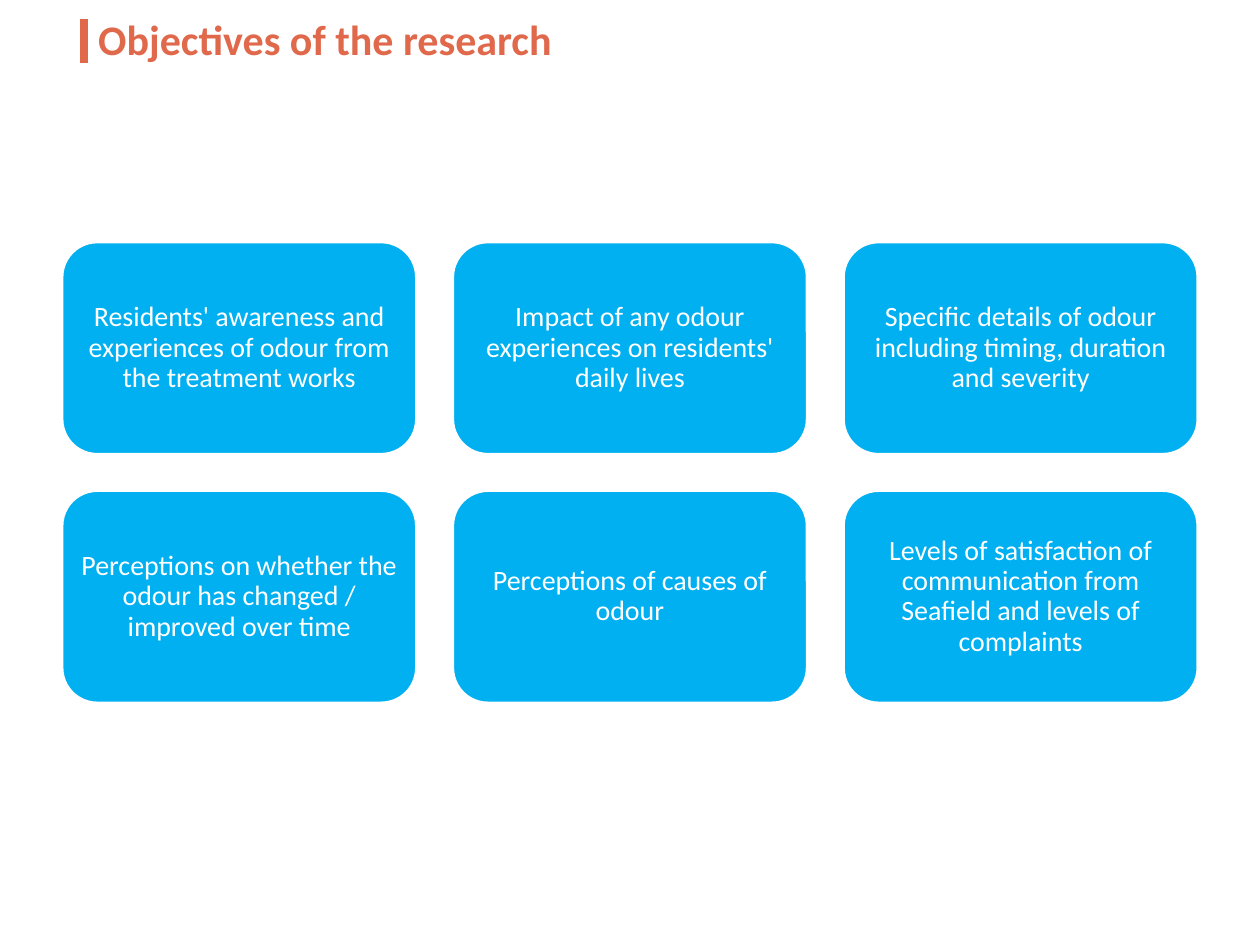
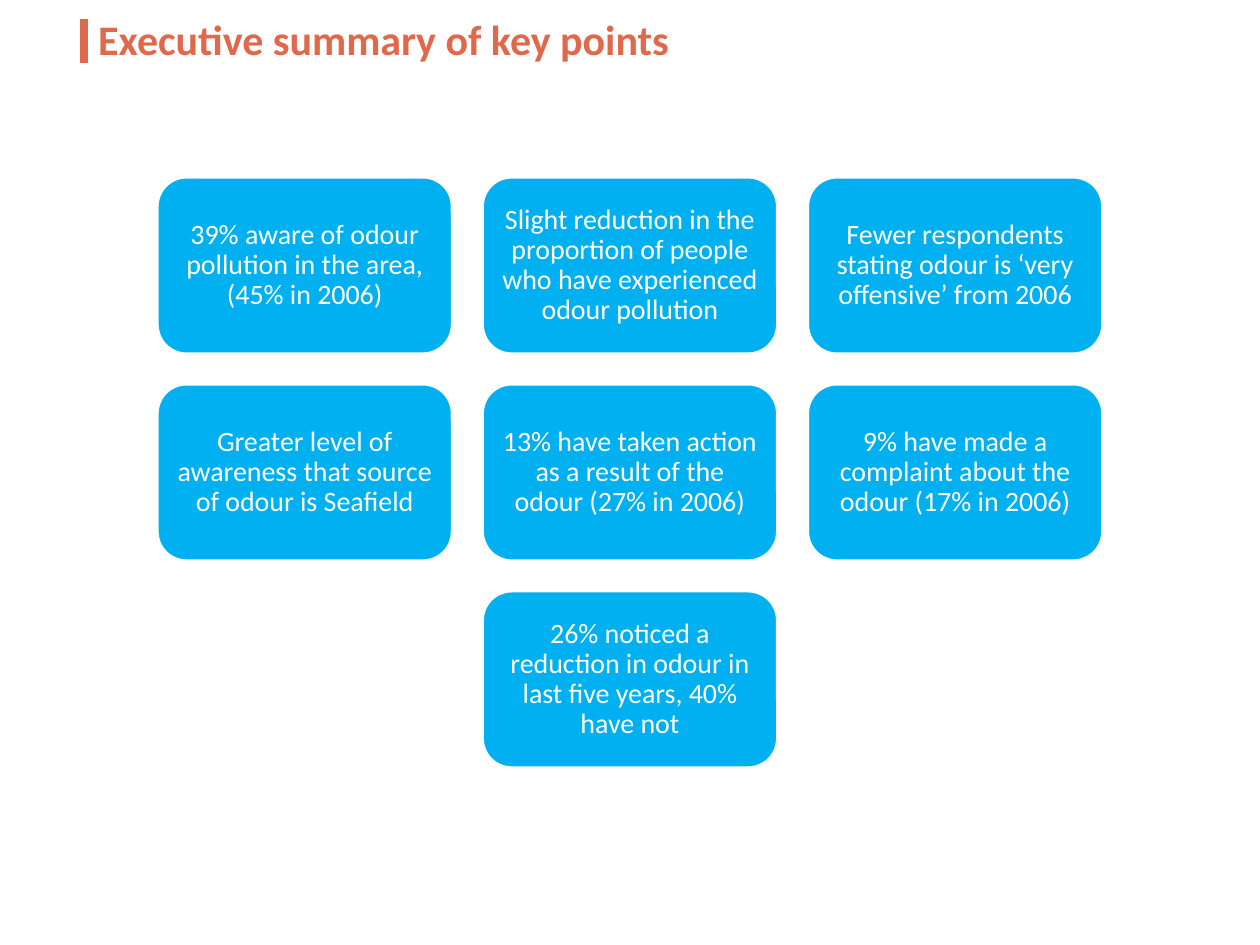
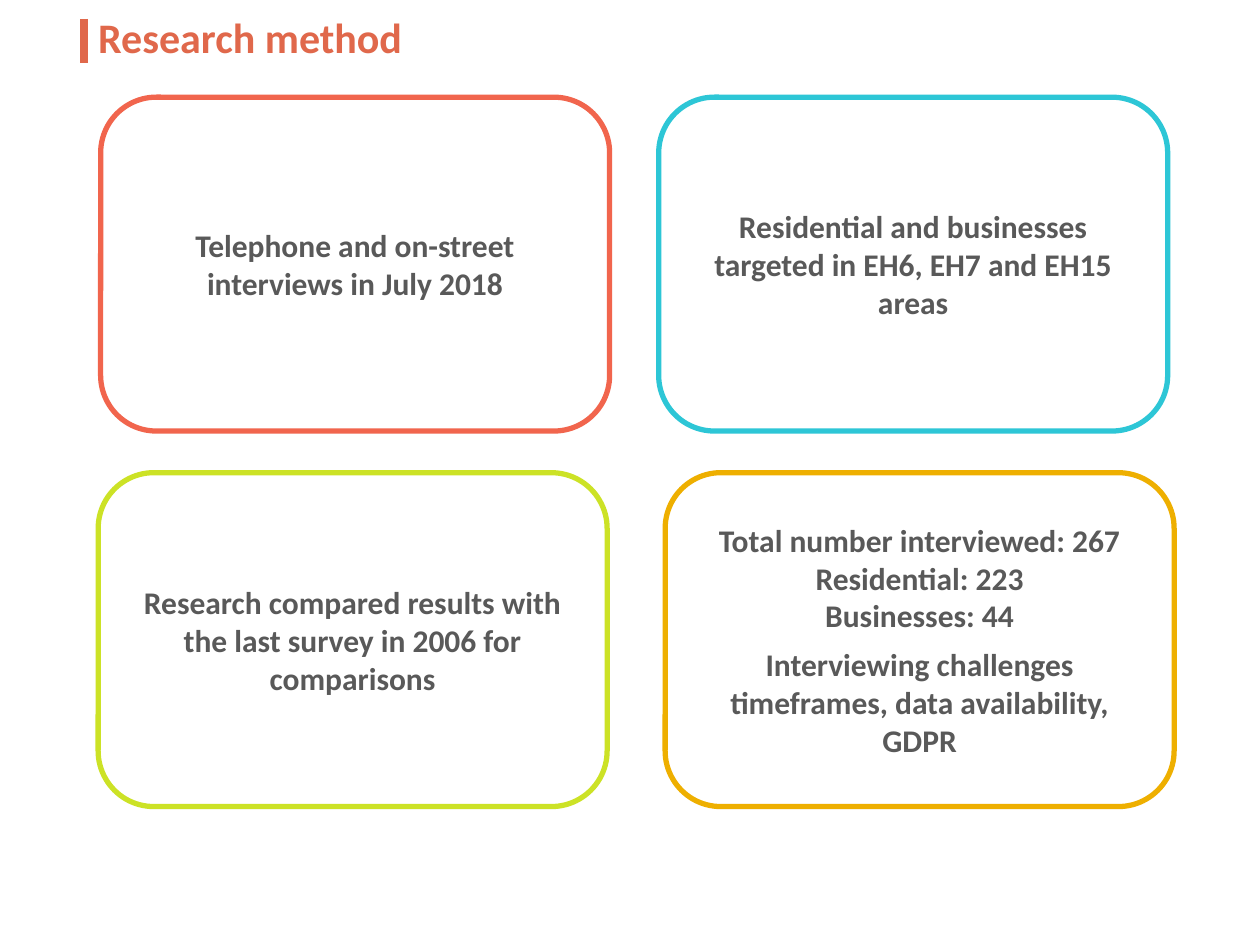
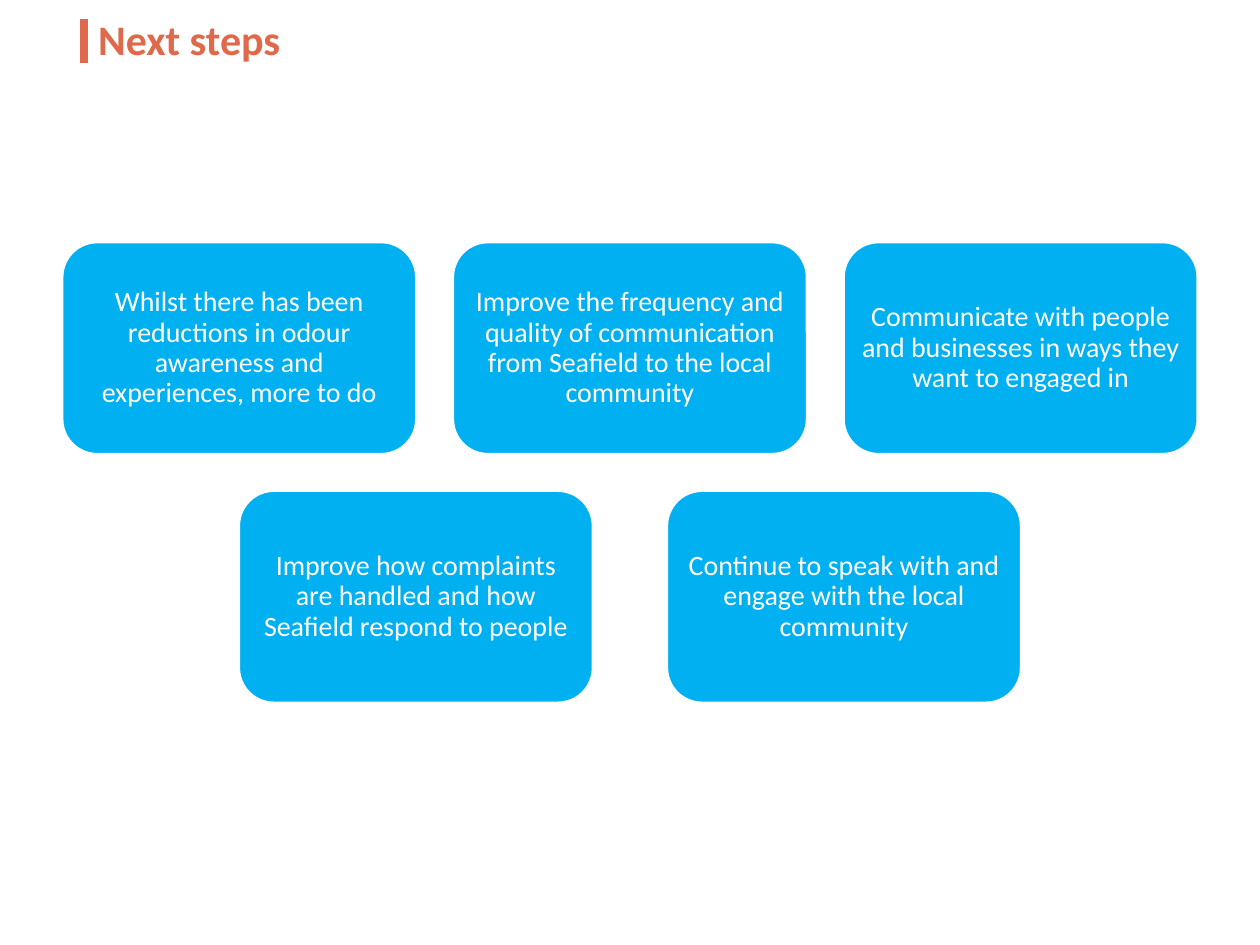
from lxml import etree
from pptx import Presentation
from pptx.dml.color import RGBColor
from pptx.enum.shapes import MSO_CONNECTOR, MSO_SHAPE
from pptx.enum.text import MSO_ANCHOR, MSO_AUTO_SIZE, PP_ALIGN
from pptx.oxml.ns import qn
from pptx.util import Cm, Pt

ROUNDED = MSO_SHAPE.ROUNDED_RECTANGLE
STRAIGHT = MSO_CONNECTOR.STRAIGHT
MIDDLE = MSO_ANCHOR.MIDDLE
NO_AUTOFIT = MSO_AUTO_SIZE.NONE
LEFT, CENTER = PP_ALIGN.LEFT, PP_ALIGN.CENTER

WHITE = RGBColor(0xFF, 0xFF, 0xFF)
RUST = RGBColor(0xE0, 0x68, 0x4B)
SKY = RGBColor(0x00, 0xB0, 0xF0)
CORAL = RGBColor(0xF1, 0x65, 0x4D)
TURQUOISE = RGBColor(0x2D, 0xC6, 0xD6)
LIME = RGBColor(0xCC, 0xE2, 0x26)
AMBER = RGBColor(0xEE, 0xAF, 0x00)
GREY = RGBColor(0x59, 0x59, 0x59)

FONT = "Calibri"
SLIDE_WIDTH, SLIDE_HEIGHT = 25.4, 19.05
TITLE_ONLY = 5
CARD_INSET = 0.17

OBJECTIVES = [
    ["Residents' awareness and experiences of odour from the treatment works",
     "Impact of any odour experiences on residents' daily lives",
     "Specific details of odour including timing, duration and severity"],
    ["Perceptions on whether the odour has changed / improved over time",
     "Perceptions of causes of odour",
     "Levels of satisfaction of communication from Seafield and levels of complaints"],
]

KEY_POINTS = [
    ["39% aware of odour pollution in the area, (45% in 2006)",
     "Slight reduction in the proportion of people who have experienced odour pollution",
     "Fewer respondents stating odour is ‘very offensive’ from 2006"],
    ["Greater level of awareness that source of odour is Seafield",
     "13% have taken action as a result of the odour (27% in 2006)",
     "9% have made a complaint about the odour (17% in 2006)"],
    ["26% noticed a reduction in odour in last five years, 40% have not"],
]

METHOD = [
    (2.03, 1.96, CORAL, ["Telephone and on-street interviews in July 2018"]),
    (13.28, 1.96, TURQUOISE,
     ["Residential and businesses targeted in EH6, EH7 and EH15 areas"]),
    (1.98, 9.53, LIME,
     ["Research compared results with the last survey in 2006 for comparisons"]),
    (13.41, 9.53, AMBER,
     ["Total number interviewed: 267\vResidential: 223\vBusinesses: 44",
      "Interviewing challenges timeframes, data availability, GDPR"]),
]
METHOD_WIDTH, METHOD_HEIGHT = 10.26, 6.73

NEXT_STEPS = [
    ["Whilst there has been reductions in odour awareness and experiences, more to do",
     "Improve the frequency and quality of communication from Seafield to the local community",
     "Communicate with people and businesses in ways they want to engaged in"],
    ["Improve how complaints are handled and how Seafield respond to people",
     "Continue to speak with and engage with the local community"],
]


def write(frame, paragraphs, size, color, bold=False, align=CENTER, spacing=1.0, inset=0):
    frame.word_wrap = True
    frame.auto_size = NO_AUTOFIT
    frame.vertical_anchor = MIDDLE
    frame.margin_left = frame.margin_right = Cm(inset)
    frame.margin_top = frame.margin_bottom = Cm(inset)
    for index, words in enumerate(paragraphs):
        paragraph = frame.add_paragraph() if index else frame.paragraphs[0]
        paragraph.text = words
        paragraph.alignment = align
        paragraph.line_spacing = spacing
        if index < len(paragraphs) - 1:
            paragraph.space_after = Pt(0.35 * size)
        for run in paragraph.runs:
            run.font.name = FONT
            run.font.size = Pt(size)
            run.font.bold = bold
            run.font.color.rgb = color


def add_titled_slide(deck, heading, top=0.33):
    slide = deck.slides.add_slide(deck.slide_layouts[TITLE_ONLY])
    title = slide.shapes.title
    title.left, title.top = Cm(1.98), Cm(top)
    title.width, title.height = Cm(22.2), Cm(0.89)
    write(title.text_frame, [heading], size=24, color=RUST, bold=True, align=LEFT)
    return slide


def add_title_bar(slide):
    bar = slide.shapes.add_connector(STRAIGHT, Cm(1.7), Cm(0.38), Cm(1.7), Cm(1.27))
    bar.line.color.rgb = RUST
    bar.line.width = Pt(4.5)
    etree.SubElement(bar.element.spPr, qn("a:effectLst"))
    slide.slide_layout.shapes.element.append(bar.element)


def add_card(slide, left, top, width, height, fill, outline, outline_width):
    card = slide.shapes.add_shape(ROUNDED, Cm(left), Cm(top), Cm(width), Cm(height))
    card.shadow.inherit = False
    card.fill.solid()
    card.fill.fore_color.rgb = fill
    card.line.color.rgb = outline
    card.line.width = Pt(outline_width)
    return card.text_frame


def add_card_rows(slide, rows, width, last_gap=None):
    height, gap = 0.6 * width, 0.1 * width
    top = (SLIDE_HEIGHT - len(rows) * height - (len(rows) - 1) * gap) / 2
    for row_index, row in enumerate(rows):
        is_last = row_index == len(rows) - 1
        row_gap = last_gap if is_last and last_gap else gap
        left = (SLIDE_WIDTH - len(row) * width - (len(row) - 1) * row_gap) / 2
        for column, words in enumerate(row):
            frame = add_card(slide, left + column * (width + row_gap),
                             top + row_index * (height + gap), width, height, SKY, WHITE, 2)
            write(frame, [words], size=16, color=WHITE, spacing=0.9, inset=CARD_INSET)


def main():
    deck = Presentation()
    deck.slide_width, deck.slide_height = Cm(SLIDE_WIDTH), Cm(SLIDE_HEIGHT)

    objectives = add_titled_slide(deck, "Objectives of the research")
    add_title_bar(objectives)
    add_card_rows(objectives, OBJECTIVES, width=7.16)

    summary = add_titled_slide(deck, "Executive summary of key points")
    add_card_rows(summary, KEY_POINTS, width=5.96)

    method = add_titled_slide(deck, "Research method", top=0.3)
    for left, top, outline, paragraphs in METHOD:
        frame = add_card(method, left, top, METHOD_WIDTH, METHOD_HEIGHT, WHITE, outline, 3)
        write(frame, paragraphs, size=18, color=GREY, bold=True, inset=CARD_INSET)

    next_steps = add_titled_slide(deck, "Next steps")
    add_card_rows(next_steps, NEXT_STEPS, width=7.16, last_gap=1.47)

    deck.save("out.pptx")


if __name__ == "__main__":
    main()
